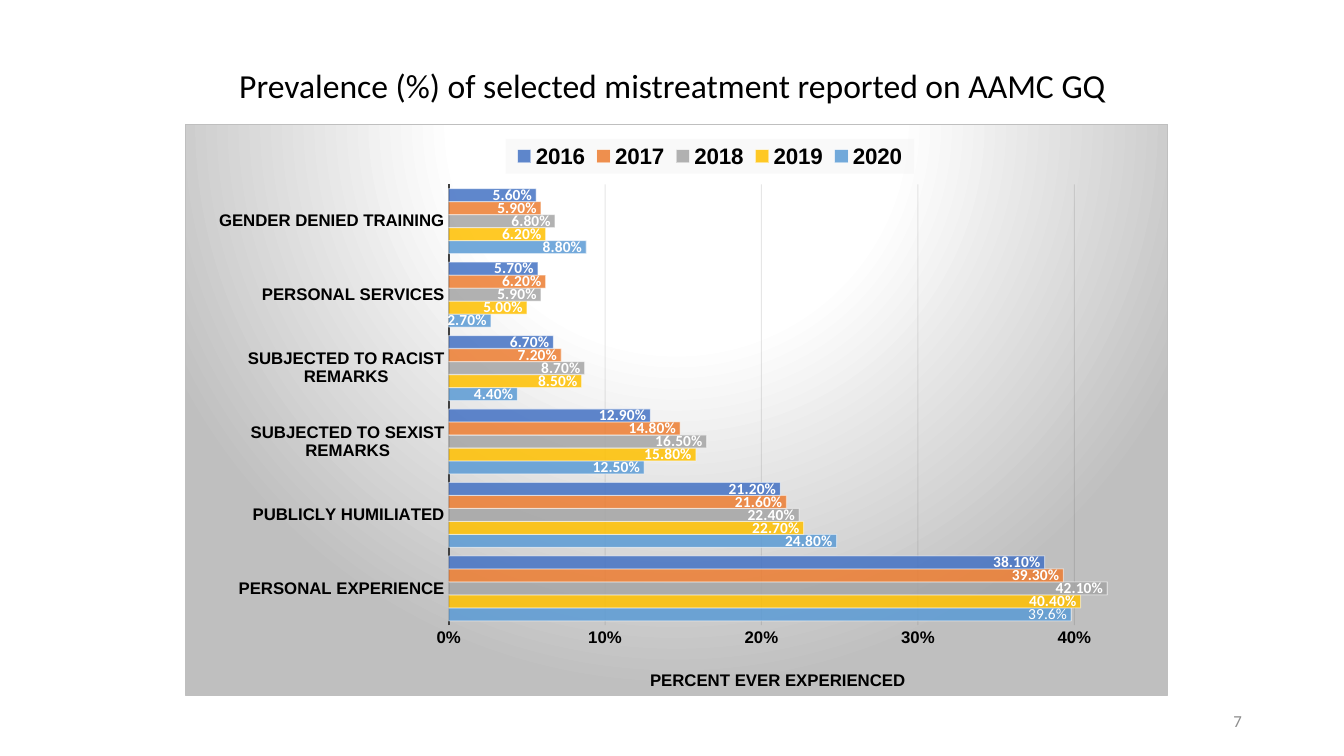
from lxml import etree
from pptx import Presentation
from pptx.chart.data import CategoryChartData
from pptx.dml.color import RGBColor
from pptx.enum.chart import (XL_CHART_TYPE, XL_LABEL_POSITION,
                             XL_LEGEND_POSITION, XL_TICK_MARK)
from pptx.enum.text import MSO_ANCHOR, MSO_AUTO_SIZE, PP_ALIGN
from pptx.oxml import parse_xml
from pptx.oxml.ns import nsdecls, qn
from pptx.util import Pt

EMU_PER_INCH = 914400
PX_PER_INCH = 100.8
TITLE_ONLY = 5

BAR_CLUSTERED = XL_CHART_TYPE.BAR_CLUSTERED
INSIDE_END = XL_LABEL_POSITION.INSIDE_END
LEGEND_BOTTOM = XL_LEGEND_POSITION.BOTTOM
NO_TICK = XL_TICK_MARK.NONE
TOP, MIDDLE = MSO_ANCHOR.TOP, MSO_ANCHOR.MIDDLE
CENTER, RIGHT = PP_ALIGN.CENTER, PP_ALIGN.RIGHT
NO_AUTO_SIZE = MSO_AUTO_SIZE.NONE

BLACK = RGBColor(0x00, 0x00, 0x00)
WHITE = RGBColor(0xFF, 0xFF, 0xFF)
NUMBER_GRAY = RGBColor(0x8C, 0x8C, 0x8C)
AXIS_GRAY = RGBColor(0x40, 0x40, 0x40)
GRID_GRAY = RGBColor(0x0D, 0x0D, 0x0D)
FRAME_GRAY = RGBColor(0xBF, 0xBF, 0xBF)
LEGEND_GRAY = RGBColor(0xF2, 0xF2, 0xF2)
BLUE = RGBColor(0x44, 0x72, 0xC4)
ORANGE = RGBColor(0xED, 0x7D, 0x31)
GRAY = RGBColor(0xA5, 0xA5, 0xA5)
GOLD = RGBColor(0xFF, 0xC0, 0x00)
LIGHT_BLUE = RGBColor(0x5B, 0x9B, 0xD5)

CATEGORIES = ["PERSONAL EXPERIENCE", "PUBLICLY HUMILIATED",
              "SUBJECTED TO SEXIST REMARKS", "SUBJECTED TO RACIST REMARKS",
              "PERSONAL SERVICES", "GENDER DENIED TRAINING"]
YEARS = [
    ("2020", LIGHT_BLUE, (0.398, 0.248, 0.125, 0.044, 0.027, 0.088)),
    ("2019", GOLD, (0.404, 0.227, 0.158, 0.085, 0.05, 0.062)),
    ("2018", GRAY, (0.421, 0.224, 0.165, 0.087, 0.059, 0.068)),
    ("2017", ORANGE, (0.393, 0.216, 0.148, 0.072, 0.062, 0.059)),
    ("2016", BLUE, (0.381, 0.212, 0.129, 0.067, 0.057, 0.056)),
]


def px(length):
    return round(length * EMU_PER_INCH / PX_PER_INCH)


def set_font(font, size, color, name, bold=False):
    font.size, font.name, font.bold = Pt(size), name, bold
    font.color.rgb = color


def set_line(line, color, width):
    line.color.rgb = color
    line.width = Pt(width)


def set_opacity(element, *percents):
    """Set the opacity of the colours in the element's spPr, in their order."""
    colors = element.find(qn("c:spPr")).iter(qn("a:srgbClr"))
    for color, percent in zip(colors, percents):
        etree.SubElement(color, qn("a:alpha")).set("val", str(percent * 1000))


def set_layout(parent, index, inner=False, **fractions):
    """Place a chart part by x, y, w and h as fractions of the chart."""
    layout = parent.find(qn("c:layout"))
    if layout is None:
        layout = parse_xml(f"<c:layout {nsdecls('c')}/>")
        parent.insert(index, layout)
    manual = etree.SubElement(layout, qn("c:manualLayout"))
    settings = [("layoutTarget", "inner")] if inner else []
    settings += [("xMode", "edge"), ("yMode", "edge"), *fractions.items()]
    for tag, value in settings:
        etree.SubElement(manual, qn(f"c:{tag}")).set("val", str(value))


def set_background(parent, content):
    properties = parse_xml(f"<c:spPr {nsdecls('c', 'a')}>{content}</c:spPr>")
    parent.find(qn("c:txPr")).addprevious(properties)


class SlideBuilder:
    body_font = "Calibri"
    chart_font = "Arial"

    def __init__(self, presentation):
        layout = presentation.slide_layouts[TITLE_ONLY]
        self.slide = presentation.slides.add_slide(layout)

    def fill_text(self, shape, text, size, color, alignment, anchor):
        frame = shape.text_frame
        frame.text = text
        frame.auto_size = NO_AUTO_SIZE
        frame.vertical_anchor = anchor
        paragraph = frame.paragraphs[0]
        paragraph.alignment = alignment
        set_font(paragraph.runs[0].font, size, color, self.body_font)

    def title(self, text, left, top, width, height):
        shape = self.slide.shapes.title
        shape.left, shape.top = px(left), px(top)
        shape.width, shape.height = px(width), px(height)
        self.fill_text(shape, text, 24, BLACK, CENTER, TOP)
        shape.text_frame.word_wrap = False

    def page_number(self, text, left, top, width, height):
        shape = self.slide.shapes.add_textbox(px(left), px(top), px(width), px(height))
        self.fill_text(shape, text, 12, NUMBER_GRAY, RIGHT, MIDDLE)
        shape.text_frame.word_wrap = True

    def bar_chart(self, left, top, width, height):
        data = CategoryChartData(number_format="0.00%")
        data.categories = CATEGORIES
        for year, _, values in YEARS:
            data.add_series(year, values)
        chart = self.slide.shapes.add_chart(
            BAR_CLUSTERED, px(left), px(top), px(width), px(height), data).chart
        chart.has_title = False
        set_font(chart.font, 10, BLACK, self.body_font)
        set_background(chart._chartSpace, f"""
            <a:gradFill><a:gsLst>
            <a:gs pos="0"><a:srgbClr val="{WHITE}"/></a:gs>
            <a:gs pos="39000"><a:srgbClr val="{WHITE}"/></a:gs>
            <a:gs pos="100000"><a:srgbClr val="{FRAME_GRAY}"/></a:gs></a:gsLst>
            <a:path path="circle">
            <a:fillToRect l="50000" t="-80000" r="50000" b="180000"/></a:path>
            </a:gradFill>
            <a:ln w="9525"><a:solidFill><a:srgbClr val="{FRAME_GRAY}"/></a:solidFill></a:ln>""")
        plot_area = chart._chartSpace.chart.plotArea
        set_layout(plot_area, 0, inner=True, x=0.268, y=0.105, w=0.717, h=0.772)
        self.bars(chart.plots[0])
        self.axes(chart)
        self.legend(chart)

    def bars(self, plot):
        plot.gap_width, plot.overlap = 65, 0
        plot.vary_by_categories = False
        for series, (_, color, _) in zip(plot.series, YEARS):
            series.format.fill.solid()
            series.format.fill.fore_color.rgb = color
            set_line(series.format.line, WHITE, 0.75)
            set_opacity(series._element, 85, 50)
            labels = series.data_labels
            labels.show_value = True
            labels.position = INSIDE_END
            labels.number_format = "0.00%"
            labels.number_format_is_linked = False
            set_font(labels.font, 11, WHITE, self.body_font, bold=True)
        label = plot.series[0].points[0].data_label
        label.text_frame.text = "39.6%"
        run = label.text_frame.paragraphs[0].runs[0]
        set_font(run.font, 11, WHITE, self.body_font)
        label.position = INSIDE_END

    def axes(self, chart):
        category_axis, value_axis = chart.category_axis, chart.value_axis
        for axis in (category_axis, value_axis):
            axis.major_tick_mark = axis.minor_tick_mark = NO_TICK
            set_font(axis.tick_labels.font, 12, BLACK, self.chart_font, bold=True)
        set_line(category_axis.format.line, AXIS_GRAY, 1.5)
        value_axis.format.line.fill.background()
        value_axis.minimum_scale, value_axis.maximum_scale = 0, 0.45
        value_axis.major_unit = 0.1
        value_axis.tick_labels.number_format = "0%"
        value_axis.tick_labels.number_format_is_linked = False
        set_line(value_axis.major_gridlines.format.line, GRID_GRAY, 0.75)
        set_opacity(value_axis._element.find(qn("c:majorGridlines")), 10)
        title = value_axis.axis_title
        title.text_frame.text = "PERCENT EVER EXPERIENCED"
        run = title.text_frame.paragraphs[0].runs[0]
        set_font(run.font, 12, BLACK, self.chart_font, bold=True)
        set_layout(title._element, 1, x=0.47, y=0.95)

    def legend(self, chart):
        chart.has_legend = True
        legend = chart.legend
        legend.position = LEGEND_BOTTOM
        legend.include_in_layout = False
        set_font(legend.font, 16, BLACK, self.chart_font, bold=True)
        set_layout(legend._element, 1, x=0.326, y=0.025, w=0.416, h=0.061)
        set_background(legend._element, f"""<a:solidFill>
            <a:srgbClr val="{LEGEND_GRAY}"><a:alpha val="39000"/></a:srgbClr>
            </a:solidFill>""")


def main():
    presentation = Presentation()
    presentation.slide_width, presentation.slide_height = px(1344), px(756)
    builder = SlideBuilder(presentation)
    builder.page_number("7", 950, 701, 302, 40)
    builder.bar_chart(185, 124, 983, 572)
    builder.title("Prevalence (%) of selected mistreatment reported on AAMC GQ",
                  225, 60, 895, 50)
    presentation.save("out.pptx")


if __name__ == "__main__":
    main()
